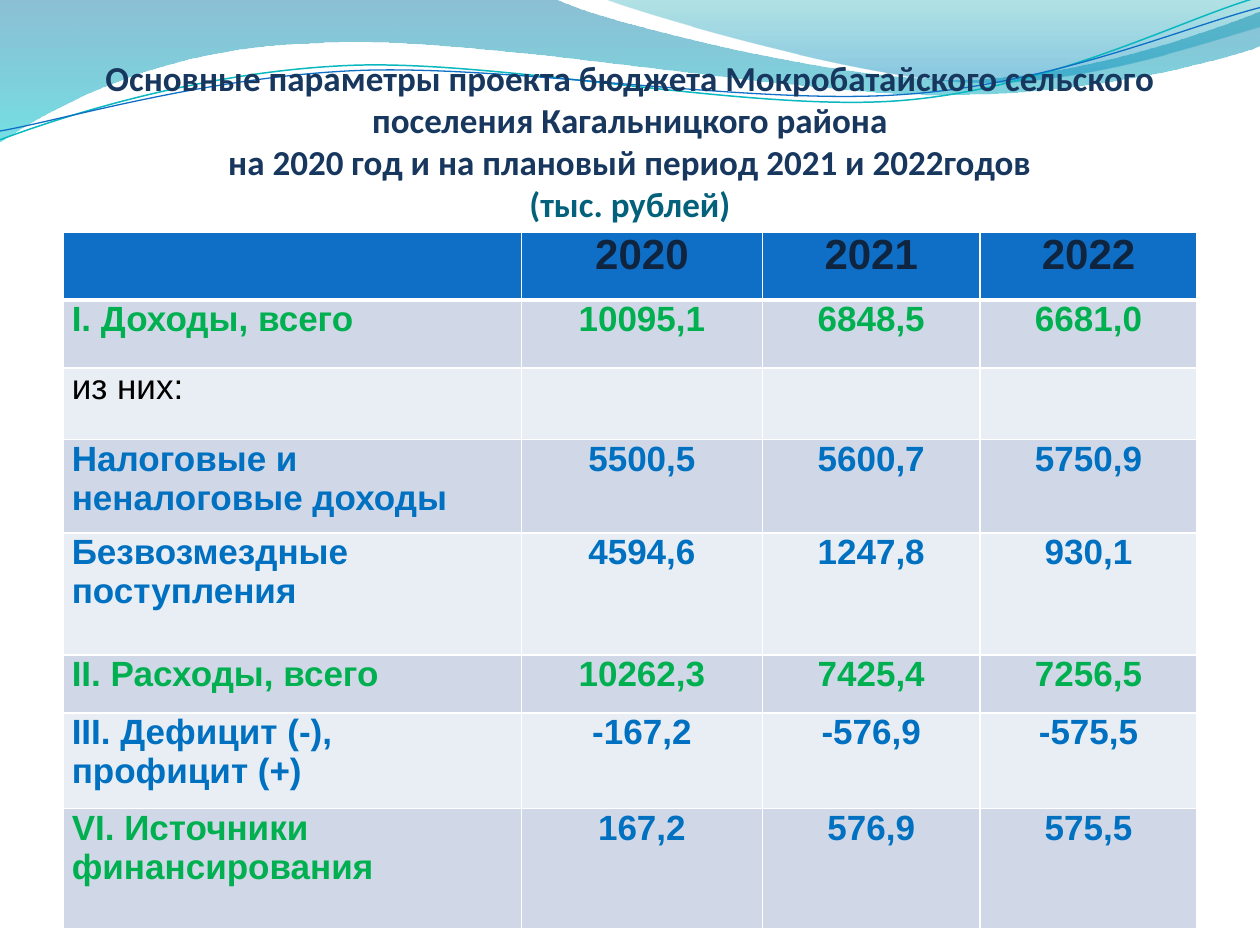
import math

import pptx
import pptx.util
import pptx.dml.color
import pptx.enum.text
import pptx.oxml
import pptx.oxml.ns

Inches = pptx.util.Inches
Pt = pptx.util.Pt
PP_ALIGN = pptx.enum.text.PP_ALIGN
ANCHOR = pptx.enum.text.MSO_ANCHOR
NAMESPACE = pptx.oxml.ns.nsdecls("a")

WHITE, NAVY, TEAL, INK = "FFFFFF", "17375E", "04617B", "0F243E"
GREEN, BLUE, BLACK = "00B050", "0070C0", "000000"
HEADER_FILL, BANDS = "0F6FC6", ("D0D8E8", "E9EDF4")

TITLE_LINES = [
    ("Основные параметры проекта бюджета Мокробатайского сельского поселения "
     "Кагальницкого района", NAVY),
    ("на 2020 год и на плановый период 2021 и 2022годов", NAVY),
    ("(тыс. рублей)", TEAL),
]

COLUMN_WIDTHS = [3.64, 1.91, 1.73, 1.72]
# height, label colour, value colour, texts
ROWS = [
    (0.54, INK, INK, ["", "2020", "2021", "2022"]),
    (0.54, GREEN, GREEN, ["I. Доходы, всего", "10095,1", "6848,5", "6681,0"]),
    (0.57, BLACK, BLACK, ["из них:", "", "", ""]),
    (0.74, BLUE, BLUE, ["Налоговые и неналоговые доходы", "5500,5", "5600,7", "5750,9"]),
    (0.97, BLUE, BLUE, ["Безвозмездные поступления", "4594,6", "1247,8", "930,1"]),
    (0.46, GREEN, GREEN, ["II. Расходы, всего", "10262,3", "7425,4", "7256,5"]),
    (0.76, BLUE, BLUE, ["III. Дефицит (-), профицит (+)", "-167,2", "-576,9", "-575,5"]),
    (0.95, GREEN, BLUE, ["VI. Источники финансирования", "167,2", "576,9", "575,5"]),
]

# Outlines: one point is a line end, three points are a Bezier segment.
LEFT_WAVE = [
    [(0, 0)], [(4.4, -0.01)], [(4.76, 0.17), (6.64, 0.63), (7.58, 0.63)],
    [(8.53, 0.63), (9.58, 0.26), (10, 0.09)], [(10.01, 0.36)],
    [(9.83, 0.44), (8.7, 0.76), (7.46, 0.75)],
    [(6.22, 0.75), (3.82, 0.28), (2.57, 0.34)],
    [(1.29, 0.36), (0.46, 0.83), (-0.01, 1.13)], [(0, 0)],
]
RIGHT_WAVE = [
    [(4.79, -0.01)], [(5.09, 0.11), (6.82, 0.62), (7.69, 0.65)],
    [(8.56, 0.69), (9.61, 0.32), (10, 0.21)], [(10, 0)], [(4.79, -0.01)],
]
TEAL_CURVE = [
    [(0, 1.11)], [(0.48, 0.93), (1.58, 0.57), (2.77, 0.52)],
    [(3.95, 0.47), (5.93, 0.89), (7.13, 0.8)],
    [(8.33, 0.71), (9.38, 0.15), (9.98, -0.02)],
]
BLUE_CURVE = [
    [(0, 1.04)], [(0.47, 0.96), (1.64, 0.61), (2.83, 0.56)],
    [(4.03, 0.51), (5.97, 0.84), (7.17, 0.75)],
    [(8.36, 0.67), (9.41, 0.21), (10, 0.06)],
]
CURVE_ROTATION = -2.7


def rgb(value):
    return pptx.dml.color.RGBColor.from_string(value)


def to_local(point, box, rotation):
    """Give a slide point in EMU within a box that is drawn rotated."""
    left, top, width, height = box
    angle = math.radians(-rotation)
    x, y = point[0] - left - width / 2, point[1] - top - height / 2
    return (Inches(x * math.cos(angle) - y * math.sin(angle) + width / 2),
            Inches(x * math.sin(angle) + y * math.cos(angle) + height / 2))


class SlideBuilder:
    title_font = "Calibri"
    table_font = "Arial"

    def __init__(self, presentation):
        self.slide = presentation.slides.add_slide(presentation.slide_layouts[5])

    def add_run(self, paragraph, text, font_name, size, color, bold=True):
        run = paragraph.add_run()
        run.text = text
        run.font.name = font_name
        run.font.size = Pt(size)
        run.font.bold = bold
        run.font.color.rgb = rgb(color)

    def outline(self, segments, box, closed, rotation=0):
        """Add a freeform, then turn its three-point segments into Bezier curves."""
        local = [[to_local(point, box, rotation) for point in segment]
                 for segment in segments]
        builder = self.slide.shapes.build_freeform(*local[0][0])
        builder.add_line_segments([segment[-1] for segment in local[1:]], close=closed)
        shape = builder.convert_to_shape()
        shape.shadow.inherit = False
        shape.left, shape.top, shape.width, shape.height = map(Inches, box)
        shape.rotation = rotation
        drawing = next(shape.element.iter(pptx.oxml.ns.qn("a:path")))
        drawing.set("w", str(shape.width))
        drawing.set("h", str(shape.height))
        for step, segment in zip(list(drawing), local):
            tag = "cubicBezTo" if len(segment) == 3 else "lnTo"
            if segment is local[0]:
                tag = "moveTo"
            points = "".join(f'<a:pt x="{x}" y="{y}"/>' for x, y in segment)
            drawing.replace(step, pptx.oxml.parse_xml(
                f"<a:{tag} {NAMESPACE}>{points}</a:{tag}>"))
        return shape

    def wave(self, segments, box, stops):
        """Add a filled wave; each stop is position, colour, opacity in percent."""
        shape = self.outline(segments, box, True)
        shape.line.fill.background()
        shape.fill.gradient()
        shape.fill.gradient_angle = 270
        for stop, (position, color, opacity) in zip(shape.fill.gradient_stops, stops):
            stop.position = position
            stop.color.rgb = rgb(color)
        color_elements = shape.element.spPr.iter(pptx.oxml.ns.qn("a:srgbClr"))
        for element, (position, color, opacity) in zip(color_elements, stops):
            element.append(pptx.oxml.parse_xml(
                f'<a:alpha {NAMESPACE} val="{opacity * 1000}"/>'))

    def curve(self, segments, box, color, width):
        shape = self.outline(segments, box, False, CURVE_ROTATION)
        shape.fill.background()
        shape.line.color.rgb = rgb(color)
        shape.line.width = Pt(width)

    def title(self, lines):
        shape = self.slide.shapes.title
        shape.left, shape.top = Inches(0.5), Inches(0.32)
        shape.width, shape.height = Inches(9), Inches(1.8)
        frame = shape.text_frame
        frame.word_wrap = True
        frame.auto_size = pptx.enum.text.MSO_AUTO_SIZE.NONE
        frame.vertical_anchor = ANCHOR.BOTTOM
        frame.margin_left = frame.margin_right = 0
        frame.margin_top, frame.margin_bottom = Inches(0.05), Inches(0.34)
        paragraph = frame.paragraphs[0]
        paragraph.alignment = PP_ALIGN.CENTER
        for index, (text, color) in enumerate(lines):
            if index:
                paragraph.add_line_break()
            self.add_run(paragraph, text, self.title_font, 20, color)
        # The title stands in front of the waves.
        shape.element.getparent().append(shape.element)

    def borders(self, cell, top, bottom):
        properties = cell._tc.get_or_add_tcPr()
        sides = [("L", 1), ("R", 1), ("T", top), ("B", bottom)]
        for index, (side, width) in enumerate(sides):
            properties.insert(index, pptx.oxml.parse_xml(
                f'<a:ln{side} {NAMESPACE} w="{Pt(width)}"><a:solidFill>'
                f'<a:srgbClr val="{WHITE}"/></a:solidFill></a:ln{side}>'))

    def table(self, left, top, widths, rows):
        total_height = sum(row[0] for row in rows)
        table = self.slide.shapes.add_table(
            len(rows), len(widths), Inches(left), Inches(top),
            Inches(sum(widths)), Inches(total_height)).table
        table.first_row = table.horz_banding = False
        for column, width in zip(table.columns, widths):
            column.width = Inches(width)
        for row_index, (height, label_color, value_color, texts) in enumerate(rows):
            table.rows[row_index].height = Inches(height)
            header = row_index == 0
            for column_index, text in enumerate(texts):
                cell = table.cell(row_index, column_index)
                cell.margin_left = cell.margin_right = Inches(0.07)
                cell.margin_top = cell.margin_bottom = 0
                cell.fill.solid()
                cell.fill.fore_color.rgb = rgb(
                    HEADER_FILL if header else BANDS[(row_index - 1) % 2])
                self.borders(cell, 3 if row_index == 1 else 1, 3 if header else 1)
                if not text:
                    continue
                paragraph = cell.text_frame.paragraphs[0]
                paragraph.alignment = PP_ALIGN.CENTER if column_index else PP_ALIGN.LEFT
                color = value_color if column_index else label_color
                self.add_run(paragraph, text, self.table_font, 24 if header else 20,
                             color, bold=color != BLACK)


def main():
    presentation = pptx.Presentation()
    presentation.slide_width, presentation.slide_height = Inches(10), Inches(7.5)
    builder = SlideBuilder(presentation)
    builder.wave(LEFT_WAVE, (-0.01, -0.01, 10.02, 1.14),
                 [(0, "0074A1", 45), (1, "00C6CF", 55)])
    builder.wave(RIGHT_WAVE, (4.79, -0.01, 5.21, 0.7),
                 [(0, "00A1A9", 30), (0.8, "008BBF", 45)])
    builder.curve(TEAL_CURVE, (-0.02, 0.22, 10.02, 0.71), "0AB8BF", 0.85)
    builder.curve(BLUE_CURVE, (-0.02, 0.3, 10.03, 0.58), HEADER_FILL, 0.75)
    builder.title(TITLE_LINES)
    builder.table(0.5, 1.84, COLUMN_WIDTHS, ROWS)
    presentation.save("out.pptx")


if __name__ == "__main__":
    main()
